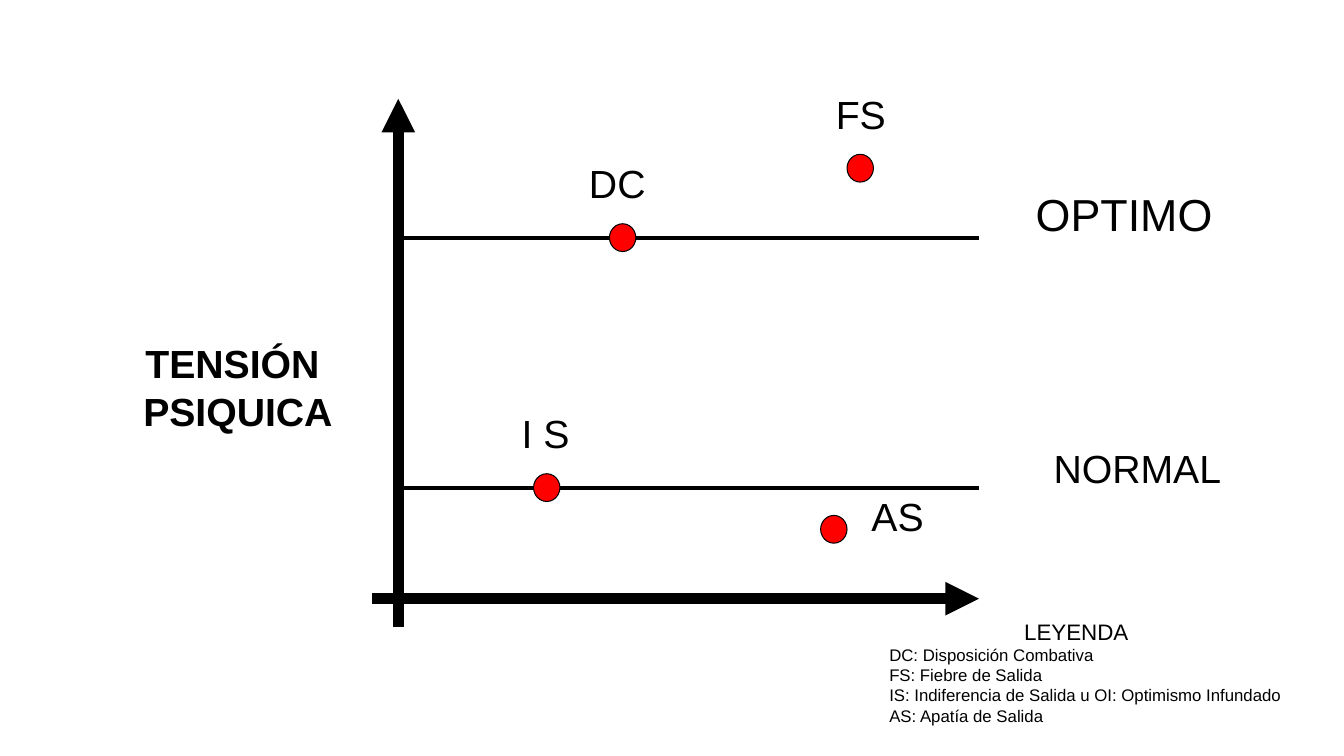
import pptx
import pptx.util
import pptx.dml.color
import pptx.enum.shapes
import pptx.enum.text
import pptx.oxml.ns
from lxml import etree

Inches, Pt = pptx.util.Inches, pptx.util.Pt
ALIGN = pptx.enum.text.PP_ALIGN
ANCHOR = pptx.enum.text.MSO_ANCHOR
BLACK, RED, WHITE = "000000", "FF0000", "FFFFFF"

# Plot area in inches, divided into 44 columns and 36 rows
PLOT_BOX = (3.95, 0.98, 5.76, 4.96)
COLUMNS, ROWS = 44, 36
OPTIMO_ROW, NORMAL_ROW = 26, 8

# label, point column and row, label's left column and top row
POINTS = [
    ("DC", 17, OPTIMO_ROW, 13.7, 32),
    ("FS", 35, 31, 32.4, 37),
    ("I S", 11.25, NORMAL_ROW, 8.6, 14),
    ("AS", 33, 5, 35.1, 8),
]
LEGEND = [
    "DC: Disposición Combativa",
    "FS: Fiebre de Salida",
    "IS: Indiferencia de Salida u OI: Optimismo Infundado",
    "AS: Apatía de Salida",
]


def rgb(color):
    return pptx.dml.color.RGBColor.from_string(color)


def grid_point(box, column, row):
    """Slide position of a grid point; rows count upwards from the axis."""
    left, top, width, height = box
    return (Inches(left + width * column / COLUMNS),
            Inches(top + height * (1 - row / ROWS)))


def grid_size(box, columns, rows):
    return Inches(box[2] * columns / COLUMNS), Inches(box[3] * rows / ROWS)


def add_line(slide, box, start, end, weight, arrow=False):
    connector = slide.shapes.add_connector(
        pptx.enum.shapes.MSO_CONNECTOR.STRAIGHT,
        *grid_point(box, *start), *grid_point(box, *end))
    connector.line.color.rgb = rgb(BLACK)
    connector.line.width = Pt(weight)
    if arrow:
        line = connector.line._get_or_add_ln()
        etree.SubElement(line, pptx.oxml.ns.qn("a:tailEnd"), type="triangle")
    properties = connector._element.spPr
    etree.SubElement(properties, pptx.oxml.ns.qn("a:effectLst"))


def add_text_box(slide, box, corner, size):
    shape = slide.shapes.add_textbox(
        *grid_point(box, *corner), *grid_size(box, *size))
    shape.text_frame.word_wrap = True
    return shape.text_frame


def add_paragraph(frame, index, text, size, align, bold=False):
    paragraph = frame.add_paragraph() if index else frame.paragraphs[0]
    paragraph.alignment = align
    run = paragraph.add_run()
    run.text = text
    run.font.name = "Arial"
    run.font.size = Pt(size)
    run.font.bold = bold
    run.font.color.rgb = rgb(BLACK)
    return paragraph


def add_label(slide, box, corner, size, lines, points=28,
              align=ALIGN.CENTER, bold=False):
    frame = add_text_box(slide, box, corner, size)
    for index, line in enumerate(lines):
        add_paragraph(frame, index, line, points, align, bold)


def draw_axes(slide, box):
    add_line(slide, box, (0, -2), (0, ROWS), 8, arrow=True)
    add_line(slide, box, (-2, 0), (COLUMNS, 0), 8, arrow=True)
    for row in (NORMAL_ROW, OPTIMO_ROW):
        add_line(slide, box, (0, row), (COLUMNS, row), 3)
    add_label(slide, box, (-23.15, 19), (22, 10),
              ["TENSIÓN ", "PSIQUICA"], bold=True)
    add_label(slide, box, (46, 11.5), (20, 6), ["NORMAL"])
    add_label(slide, box, (46, 30), (18, 6), ["OPTIMO"], points=32)


def draw_points(slide, box):
    for label, column, row, label_column, label_row in POINTS:
        dot = slide.shapes.add_shape(
            pptx.enum.shapes.MSO_SHAPE.OVAL,
            *grid_point(box, column - 1, row + 1), *grid_size(box, 2, 2))
        dot.shadow.inherit = False
        dot.fill.solid()
        dot.fill.fore_color.rgb = rgb(RED)
        dot.line.color.rgb = rgb(BLACK)
        dot.line.width = Pt(0.75)
        add_label(slide, box, (label_column, label_row), (10, 6), [label],
                  align=ALIGN.LEFT)


def draw_legend(slide, box):
    frame = add_text_box(slide, box, (29.5, -0.9), (40, 8.7))
    frame.vertical_anchor = ANCHOR.MIDDLE
    heading = add_paragraph(frame, 0, "LEYENDA", 16, ALIGN.CENTER)
    heading._p.get_or_add_pPr().set("indent", str(Inches(0.49)))
    for index, entry in enumerate(LEGEND, start=1):
        paragraph = add_paragraph(frame, index, entry, 12, ALIGN.JUSTIFY)
        paragraph._p.get_or_add_pPr().set("marL", str(Inches(0.91)))


def main():
    presentation = pptx.Presentation()
    presentation.slide_width = Inches(13.33)
    presentation.slide_height = Inches(7.5)
    slide = presentation.slides.add_slide(presentation.slide_layouts[6])
    slide.background.fill.solid()
    slide.background.fill.fore_color.rgb = rgb(WHITE)
    draw_axes(slide, PLOT_BOX)
    draw_points(slide, PLOT_BOX)
    draw_legend(slide, PLOT_BOX)
    presentation.save("out.pptx")


if __name__ == "__main__":
    main()
